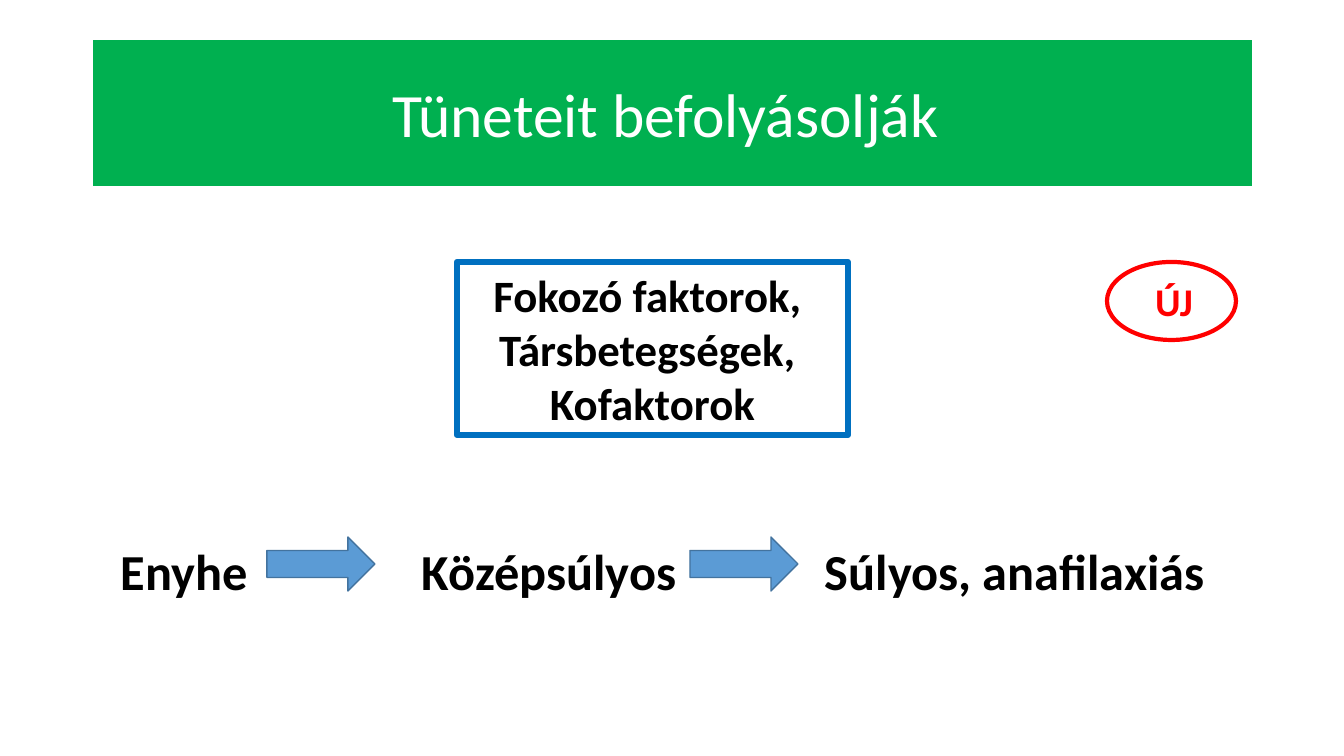
from pptx import Presentation
from pptx.dml.color import RGBColor
from pptx.enum.shapes import MSO_SHAPE
from pptx.enum.text import MSO_ANCHOR, MSO_AUTO_SIZE, PP_ALIGN
from pptx.util import Emu, Pt

PX = 9072  # EMU per px, at 100.8 px to the inch
FONT = "Calibri"


def px(length):
    return Emu(length * PX)


def color(value):
    return RGBColor.from_string(value)


def write(shape, lines, size, text_color, bold=True, align=PP_ALIGN.CENTER):
    """Fill a shape with one paragraph per line, centred vertically."""
    frame = shape.text_frame
    frame.word_wrap = True
    frame.auto_size = MSO_AUTO_SIZE.NONE
    frame.vertical_anchor = MSO_ANCHOR.MIDDLE
    frame.text = "\n".join(lines)
    for paragraph in frame.paragraphs:
        paragraph.alignment = align
        paragraph.font.name = FONT
        paragraph.font.size = Pt(size)
        paragraph.font.bold = bold
        paragraph.font.color.rgb = color(text_color)


def add_shape(slide, kind, box, line_color, line_width, fill=None):
    shape = slide.shapes.add_shape(kind, *map(px, box))
    shape.shadow.inherit = False
    if fill:
        shape.fill.solid()
        shape.fill.fore_color.rgb = color(fill)
    else:
        shape.fill.background()
    shape.line.color.rgb = color(line_color)
    shape.line.width = Pt(line_width)
    return shape


def format_title(slide, box, text):
    title = slide.shapes.title
    title.left, title.top, title.width, title.height = map(px, box)
    title.fill.solid()
    title.fill.fore_color.rgb = color("00B050")
    write(title, [text], 44, "FFFFFF", bold=False)


def add_factors(slide, box):
    factors = add_shape(slide, MSO_SHAPE.RECTANGLE, box, "0070C0", 4.5)
    write(factors, ["Fokozó faktorok, ", "Társbetegségek, ", "Kofaktorok"], 32, "000000")


def add_badge(slide, box):
    badge = add_shape(slide, MSO_SHAPE.OVAL, box, "FF0000", 3)
    write(badge, ["ÚJ"], 28, "FF0000")
    frame = badge.text_frame
    frame.margin_left = px(5)
    frame.margin_right = frame.margin_top = frame.margin_bottom = 0


def add_severity_scale(slide, box):
    """Place the three severity labels in a row, with an arrow before each later one."""
    left, top, width, height = box
    labels = [("Enyhe", 0, 140), ("Középsúlyos", 301, 265),
              ("Súlyos, anafilaxiás", 704, width - 704)]
    for text, offset, label_width in labels:
        label = slide.shapes.add_textbox(
            *map(px, (left + offset, top, label_width, height)))
        write(label, [text], 36, "000000", align=PP_ALIGN.LEFT)
        frame = label.text_frame
        frame.margin_left = frame.margin_right = 0
        frame.margin_top = frame.margin_bottom = 0
    for offset in (146, 569):
        add_shape(slide, MSO_SHAPE.RIGHT_ARROW, (left + offset, top - 3, 108, 54),
                  "43739E", 1, fill="5B9BD5")


def main():
    presentation = Presentation()
    presentation.slide_width = px(1344)
    presentation.slide_height = px(756)
    slide = presentation.slides.add_slide(presentation.slide_layouts[5])
    format_title(slide, (93, 40, 1159, 146), "Tüneteit befolyásolják ")
    add_factors(slide, (457, 262, 391, 173))
    add_badge(slide, (1107, 262, 129, 78))
    add_severity_scale(slide, (121, 540, 1120, 61))
    presentation.save("out.pptx")


if __name__ == "__main__":
    main()
